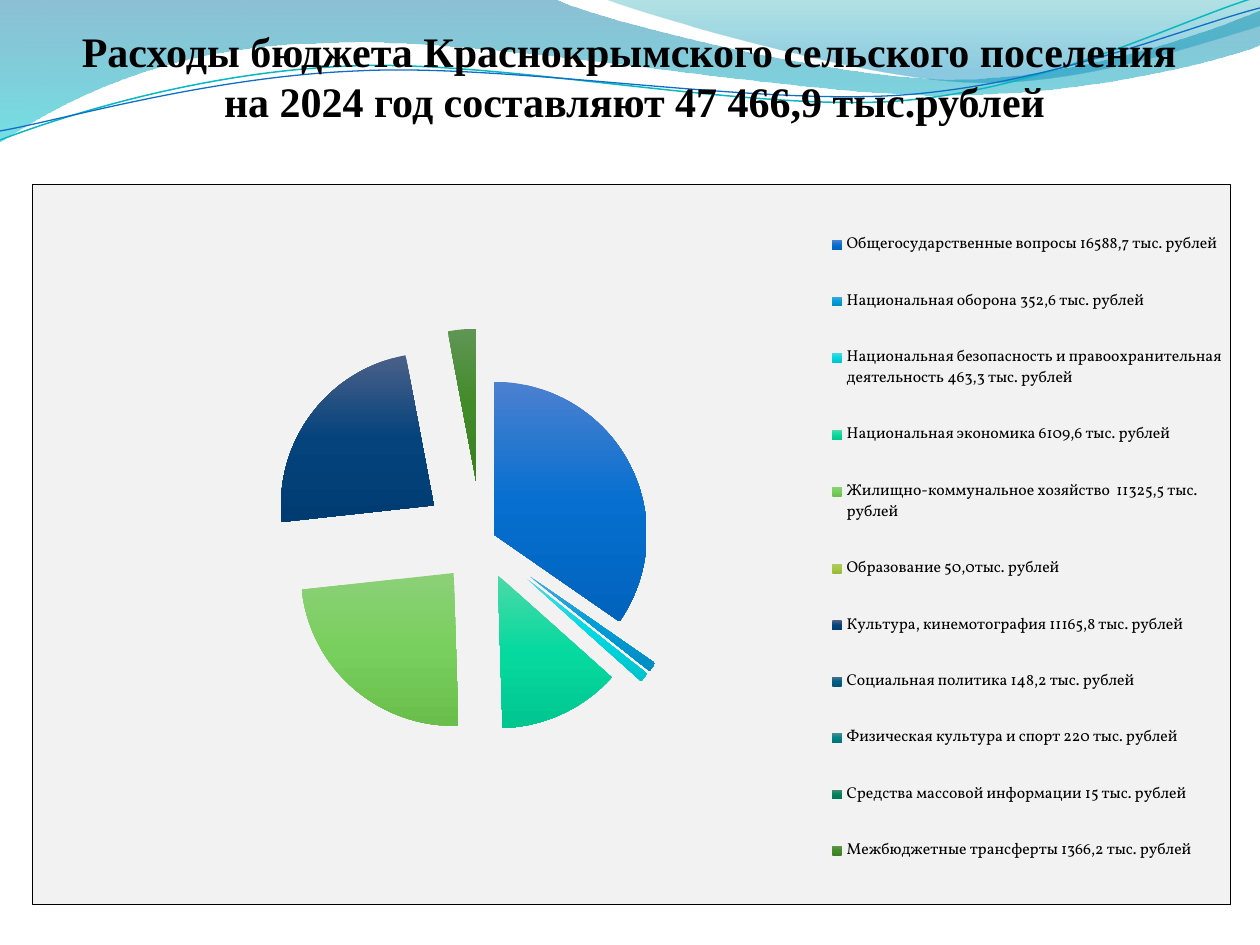
from lxml.etree import SubElement
from pptx import Presentation
from pptx.chart.data import CategoryChartData
from pptx.dml.color import RGBColor
from pptx.enum.chart import XL_CHART_TYPE as ChartType, XL_LEGEND_POSITION as LegendSide
from pptx.enum.text import MSO_ANCHOR as Anchor, PP_ALIGN as Align
from pptx.oxml import parse_xml
from pptx.oxml.ns import nsdecls, qn
from pptx.util import Pt

PX = 9144000 / 1260  # EMU in one px
COLORS = {"ink": "000000", "panel": "F2F2F2", "teal": "0AB8BF", "blue": "0F6FC6"}

TITLE = ["Расходы бюджета Краснокрымского сельского поселения ",
         "на 2024 год составляют 47 466,9 тыс.рублей"]

# Label, share in percent, explosion, gradient from top to bottom
EXPENSES = [
    ("Общегосударственные вопросы 16588,7 тыс. рублей", 35, 9, "4C80D0 066FCF 0063BD"),
    ("Национальная оборона 352,6 тыс. рублей", 1, 39, "4BA8E0 009DD9 008CC1"),
    ("Национальная безопасность и правоохранительная деятельность 463,3 тыс. рублей",
     1, 39, "4BDAE2 01D9E3 00C2CB"),
    ("Национальная экономика 6109,6 тыс. рублей", 13, 25, "4CD9A7 06D99F 00C690"),
    ("Жилищно-коммунальное хозяйство  11325,5 тыс. рублей", 24, 28, "8BD077 79CF5D 69BE4C"),
    ("Образование 50,0тыс. рублей", 0, 39, "AFC964 A8C843 99B935"),
    ("Культура, кинемотография 11165,8 тыс. рублей", 24, 39, "4B6088 04437C 003C72"),
    ("Социальная политика 148,2 тыс. рублей", 0, 39, "4B7390 005E82 005474"),
    ("Физическая культура и спорт 220 тыс. рублей", 0, 39, "4B8D92 008288 00747A"),
    ("Средства массовой информации 15 тыс. рублей", 0, 39, "4B8D73 048260 007757"),
    ("Межбюджетные трансферты 1366,2 тыс. рублей", 3, 39, "609554 418B29 388020"),
]

# Outlines in px: one point is a straight step, three points are a Bezier step
BANDS = [
    ([[(0, 0)], [(554, -1)], [(600, 21), (837, 79), (955, 79)],
      [(1075, 79), (1207, 33), (1260, 11)], [(1261, 45)],
      [(1239, 55), (1096, 96), (940, 95)], [(784, 95), (481, 35), (324, 43)],
      [(161, 45), (58, 105), (-1, 142)], [(0, 0)]],
     [(0, "0074A1", 45), (100, "00C6CF", 55)]),
    ([[(604, -1)], [(641, 14), (859, 78), (969, 82)],
      [(1079, 87), (1211, 40), (1260, 26)], [(1260, 0)], [(604, -1)]],
     [(0, "00A1A9", 30), (80, "008BBF", 45)]),
]
CURVES = [
    ([[(0, 140)], [(60, 117), (199, 72), (349, 66)], [(498, 59), (747, 112), (898, 101)],
      [(1050, 89), (1182, 19), (1257, -3)]], "teal", 0.85),
    ([[(0, 131)], [(59, 121), (207, 77), (357, 71)], [(508, 63), (752, 106), (903, 95)],
      [(1053, 84), (1189, 26), (1260, 8)]], "blue", 0.75),
]


def px(*lengths):
    return [round(length * PX) for length in lengths]


def rgb(name):
    return RGBColor.from_string(COLORS[name])


def set_stops(gradient, stops):
    """Fill a gradFill element, top to bottom, from (percent, hex, opacity)."""
    for child in list(gradient):
        gradient.remove(child)
    stop_list = SubElement(gradient, qn("a:gsLst"))
    for position, color, opacity in stops:
        stop = SubElement(stop_list, qn("a:gs"), pos=str(position * 1000))
        tint = SubElement(stop, qn("a:srgbClr"), val=color)
        if opacity < 100:
            SubElement(tint, qn("a:alpha"), val=str(opacity * 1000))
    SubElement(gradient, qn("a:lin"), ang="5400000", scaled="0")


def add_outline(page, steps, close):
    """Build a freeform, then join each three-point step into one Bezier."""
    start, *rest = [px(*point) for step in steps for point in step]
    builder = page.shapes.build_freeform(*start, scale=1.0)
    builder.add_line_segments(rest, close=close)
    shape = builder.convert_to_shape()
    shape.shadow.inherit = False
    lines = iter(list(shape._element.iter(qn("a:lnTo"))))
    for step in steps[1:]:
        group = [next(lines) for _ in step]
        if len(group) == 3:
            bezier = parse_xml(f"<a:cubicBezTo {nsdecls('a')}/>")
            group[0].addprevious(bezier)
            for line in group:
                bezier.append(line[0])
                line.getparent().remove(line)
    return shape


def set_layout(parent, index, x, y, w, h, inner=False):
    """Give a plot area or legend a fixed place, in fractions of the chart."""
    old = parent.find(qn("c:layout"))
    if old is not None:
        parent.remove(old)
    layout = parse_xml(f"<c:layout {nsdecls('c')}><c:manualLayout/></c:layout>")
    values = [("xMode", "edge"), ("yMode", "edge"), ("x", x), ("y", y), ("w", w), ("h", h)]
    if inner:
        values.insert(0, ("layoutTarget", "inner"))
    for tag, value in values:
        SubElement(layout[0], qn(f"c:{tag}"), val=str(value))
    parent.insert(index, layout)


def add_waves(page):
    for steps, stops in BANDS:
        band = add_outline(page, steps, close=True)
        band.line.fill.background()
        band.fill.gradient()
        set_stops(next(band._element.iter(qn("a:gradFill"))), stops)
    for steps, color, width in CURVES:
        curve = add_outline(page, steps, close=False)
        curve.fill.background()
        curve.line.color.rgb = rgb(color)
        curve.line.width = Pt(width)


def add_title(page):
    title = page.shapes.title
    title.left, title.top, title.width, title.height = px(34, 16, 1201, 115)
    page.shapes._spTree.append(title._element)  # in front of the waves
    frame = title.text_frame
    frame.word_wrap = True
    frame.vertical_anchor = Anchor.TOP
    frame.margin_top = px(9)[0]
    frame.text = "\n".join(TITLE)
    for para in frame.paragraphs:
        para.alignment = Align.CENTER
        para.space_before = Pt(0)
        font = para.runs[0].font
        font.name, font.size, font.bold = "Times New Roman", Pt(24), True
        font.color.rgb = rgb("ink")


def add_pie(page):
    data = CategoryChartData()
    data.categories = [label for label, *_ in EXPENSES]
    data.add_series("Series 1", [share for _, share, *_ in EXPENSES])
    chart = page.shapes.add_chart(ChartType.PIE, *px(32, 184, 1199, 721), data).chart
    chart.has_title = False
    chart.has_legend = True
    chart.legend.position = LegendSide.BOTTOM
    chart.legend.include_in_layout = False
    for font, size in ((chart.font, 10), (chart.legend.font, 9)):
        font.name, font.size = "Vollkorn", Pt(size)
        font.color.rgb = rgb("ink")

    # Slices
    plot = chart.plots[0]
    plot.vary_by_categories = True
    series = plot.series[0]
    for i in range(len(EXPENSES)):
        style = series.points[i].format
        style.fill.gradient()
        style.line.fill.background()
    slices = list(series._element.iter(qn("c:dPt")))
    for piece, (_, _, distance, shades) in zip(slices, EXPENSES):
        stops = [(at, color, 100) for at, color in zip((0, 50, 100), shades.split())]
        set_stops(next(piece.iter(qn("a:gradFill"))), stops)
        piece.find(qn("c:spPr")).addprevious(
            parse_xml(f'<c:explosion {nsdecls("c")} val="{distance}"/>'))
    series._element.find(qn("c:tx")).addnext(
        parse_xml(f'<c:explosion {nsdecls("c")} val="39"/>'))

    # Panel and places
    space = chart._chartSpace
    body = space.find(qn("c:chart"))
    body.addnext(parse_xml(
        f'<c:spPr {nsdecls("c", "a")}>'
        f'<a:solidFill><a:srgbClr val="{COLORS["panel"]}"/></a:solidFill>'
        f'<a:ln w="9525"><a:solidFill><a:srgbClr val="{COLORS["ink"]}"/></a:solidFill></a:ln>'
        '</c:spPr>'))
    set_layout(body.find(qn("c:plotArea")), 0, 0, 0.2, 0.75, 0.59, inner=True)
    set_layout(body.find(qn("c:legend")), 1, 0.66, 0.02, 0.34, 0.97)


def main():
    deck = Presentation()
    deck.slide_width, deck.slide_height = px(1260, 945)
    page = deck.slides.add_slide(deck.slide_layouts[5])
    add_waves(page)
    add_title(page)
    add_pie(page)
    deck.save("out.pptx")


if __name__ == "__main__":
    main()
